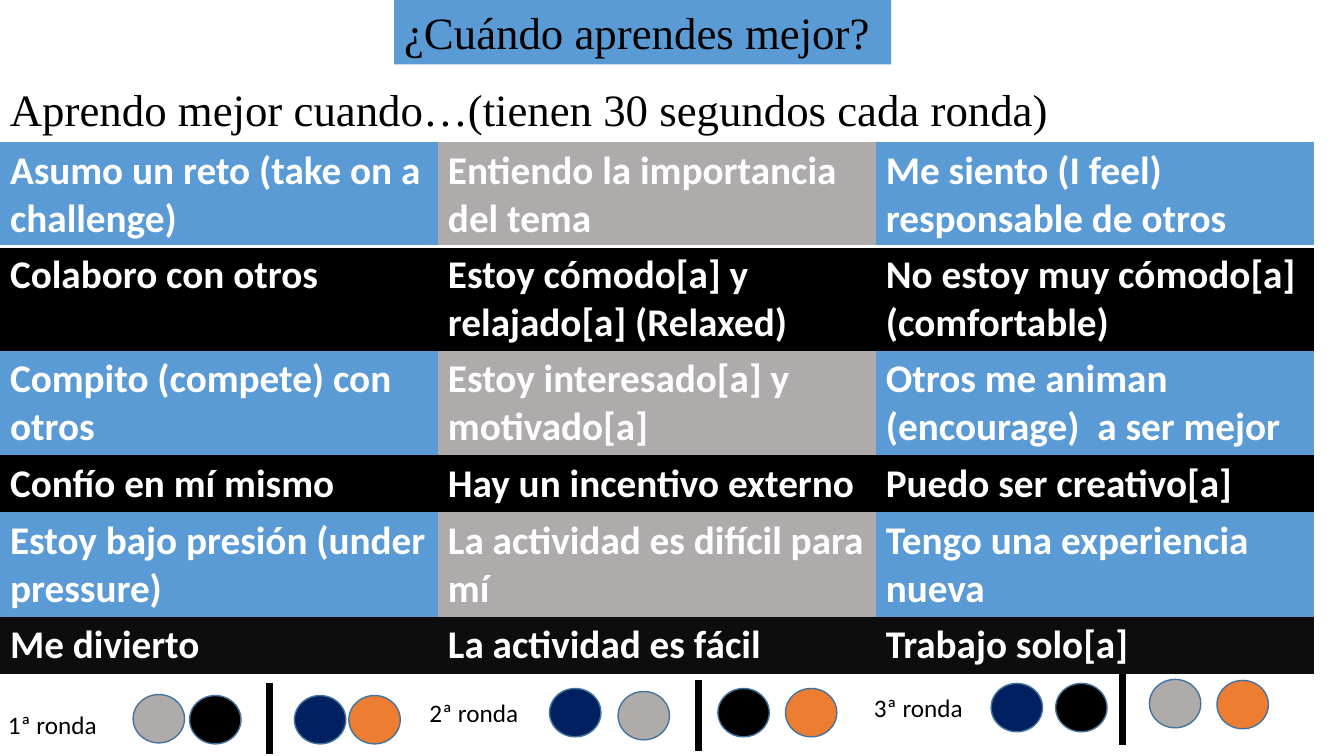
from lxml.etree import SubElement
from pptx import Presentation
from pptx.dml.color import RGBColor
from pptx.enum.shapes import MSO_CONNECTOR as CONNECTOR, MSO_SHAPE as SHAPE
from pptx.enum.text import MSO_AUTO_SIZE as AUTO_SIZE
from pptx.oxml.ns import qn
from pptx.util import Emu, Pt

BLUE, GRAY, BLACK, WHITE = "5B9BD5", "AFABAB", "000000", "FFFFFF"
NAVY, ORANGE, OUTLINE, CHARCOAL = "002060", "ED7D31", "43739E", "0D0D0D"
SERIF, SANS = "Times New Roman", "Calibri"
NO_GRID_STYLE = "{2D5ABB26-0587-4C30-8999-92F81FD0307C}"

REASONS = [
    ("Asumo un reto (take on a challenge)", "Entiendo la importancia del tema",
     "Me siento (I feel) responsable de otros"),
    ("Colaboro con otros", "Estoy cómodo[a] y relajado[a] (Relaxed)",
     "No estoy muy cómodo[a] (comfortable)"),
    ("Compito (compete) con otros", "Estoy interesado[a] y motivado[a]",
     "Otros me animan (encourage)  a ser mejor"),
    ("Confío en mí mismo", "Hay un incentivo externo", "Puedo ser creativo[a]"),
    ("Estoy bajo presión (under pressure)", "La actividad es difícil para mí",
     "Tengo una experiencia nueva"),
    ("Me divierto", "La actividad es fácil", "Trabajo solo[a]"),
]
ROW_HEIGHTS = [103, 103, 103, 57, 103, 57]
MIXED = [BLUE, GRAY, BLUE]
ROW_FILLS = [MIXED, [BLACK] * 3, MIXED, [BLACK] * 3, MIXED, [CHARCOAL] * 3]

ROUNDS = [
    ("1ª ronda", (-2, 699), (267, 678),
     [(132, 689, GRAY), (188, 690, BLACK), (292, 690, NAVY), (346, 690, ORANGE)]),
    ("2ª ronda", (416, 687), (693, 675),
     [(545, 683, NAVY), (613, 686, GRAY), (712, 683, BLACK), (779, 683, ORANGE)]),
    ("3ª ronda", (857, 682), (1113, 669),
     [(983, 678, NAVY), (1047, 678, BLACK), (1140, 674, GRAY), (1207, 675, ORANGE)]),
]


def px(n):
    return Emu(n * 9144)


def rgb(value):
    return RGBColor.from_string(value)


class Board:
    """Draws styled elements on the current slide."""

    def __init__(self, slide):
        self.shapes = slide.shapes

    def format(self, tf, size, font, color, bold=False):
        for r in tf.paragraphs[0].runs:
            r.font.size = Pt(size)
            r.font.name = font
            r.font.bold = bold
            r.font.color.rgb = rgb(color)

    def text(self, text, x, y, w, h, size, font, fill=None):
        sp = self.shapes.add_textbox(px(x), px(y), px(w), px(h))
        if fill:
            sp.fill.solid()
            sp.fill.fore_color.rgb = rgb(fill)
        tf = sp.text_frame
        tf.word_wrap = True
        tf.auto_size = AUTO_SIZE.SHAPE_TO_FIT_TEXT
        tf.text = text
        self.format(tf, size, font, BLACK)

    def circle(self, x, y, fill):
        sp = self.shapes.add_shape(SHAPE.OVAL, px(x), px(y), px(51), px(48))
        sp.shadow.inherit = False
        sp.fill.solid()
        sp.fill.fore_color.rgb = rgb(fill)
        sp.line.color.rgb = rgb(OUTLINE)
        sp.line.width = Pt(1)

    def divider(self, x, y):
        line = self.shapes.add_connector(CONNECTOR.STRAIGHT, px(x), px(y), px(x), px(y + 70))
        line.line.color.rgb = rgb(BLACK)
        line.line.width = Pt(4.75)
        SubElement(line._element.spPr, qn("a:effectLst"))

    def border(self, cell, side, color, width):
        tc_pr = cell._tc.get_or_add_tcPr()
        ln = tc_pr.makeelement(qn(f"a:{side}"), {"w": str(Pt(width))})
        tc_pr.insert(0, ln)
        SubElement(SubElement(ln, qn("a:solidFill")), qn("a:srgbClr"), val=color)

    def table(self, rows, heights, fills, x, y, w):
        frame = self.shapes.add_table(len(rows), len(rows[0]), px(x), px(y), px(w), px(sum(heights)))
        table = frame.table
        table.horz_banding = False
        table._tbl.tblPr.find(qn("a:tableStyleId")).text = NO_GRID_STYLE
        for i, (texts, height, colors) in enumerate(zip(rows, heights, fills)):
            table.rows[i].height = px(height)
            for j, (text, color) in enumerate(zip(texts, colors)):
                cell = table.cell(i, j)
                cell.fill.solid()
                cell.fill.fore_color.rgb = rgb(color)
                cell.text_frame.text = text
                self.format(cell.text_frame, 28, SANS, WHITE, bold=True)
                if i == 0:
                    self.border(cell, "lnB", WHITE, 2)


def main():
    prs = Presentation()
    prs.slide_width, prs.slide_height = px(1333), px(750)
    s = prs.slides.add_slide(prs.slide_layouts[6])
    board = Board(s)
    board.text("¿Cuándo aprendes mejor?", 391, 0, 493, 64, 32, SERIF, BLUE)
    board.table(REASONS, ROW_HEIGHTS, ROW_FILLS, 0, 141, 1303)
    board.text("Aprendo mejor cuando…(tienen 30 segundos cada ronda)", 0, 76, 1077, 64, 32, SERIF)
    for label, label_at, divider_at, circles in ROUNDS:
        for circle in circles:
            board.circle(*circle)
        board.divider(*divider_at)
        board.text(label, *label_at, 124, 40, 18, SANS)
    prs.save("out.pptx")


if __name__ == "__main__":
    main()
